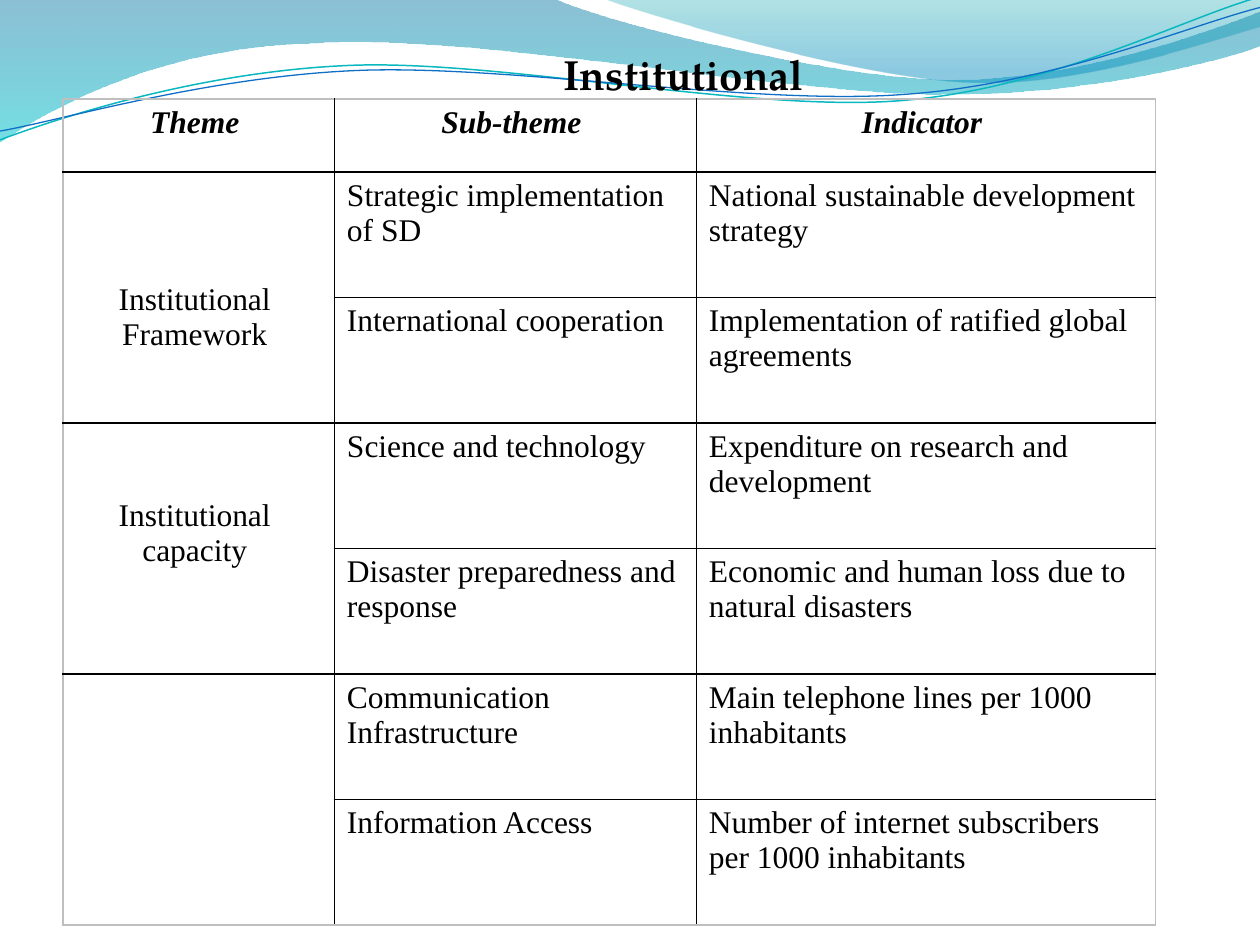
from dataclasses import dataclass
from math import cos, radians, sin

from lxml.etree import SubElement
from pptx import Presentation
from pptx.dml.color import RGBColor
from pptx.enum.text import MSO_ANCHOR, MSO_AUTO_SIZE, PP_ALIGN
from pptx.oxml.ns import qn
from pptx.util import Pt

BODY_FONT = "Times New Roman"
TITLE_FONT = "TeX Gyre Pagella"
BLACK = "000000"
GREY = "BFBFBF"
LINE_PITCH = 19.8
CELL_MARGIN = 3.6
COLUMN_WIDTHS = (155.1, 206.8, 262.4)
HEADER_HEIGHT = 41.7
ROW_HEIGHT = 71.7


@dataclass(frozen=True)
class Stop:
    position: int
    color: str
    opacity: int


@dataclass(frozen=True)
class Wave:
    start: tuple
    segments: tuple
    stops: tuple = ()
    line_color: str = ""
    line_width: float = 0
    tilt: float = 0
    pivot: tuple = (0, 0)


@dataclass(frozen=True)
class Theme:
    lines: tuple
    rows: tuple
    lines_above: int = 0


WAVES = (
    Wave((0, 0), (
        (316.8, -0.7),
        (342.7, 12.2, 478.1, 45.4, 545.8, 45.4),
        (614.2, 45.4, 689.8, 18.7, 720, 6.5),
        (720.7, 25.9),
        (707.8, 31.7, 626.4, 54.7, 537.1, 54),
        (447.8, 54, 275, 20.2, 185, 24.5),
        (92.9, 25.9, 33.1, 59.8, -0.7, 81.4),
        (0, 0),
    ), stops=(Stop(0, "0074A1", 45), Stop(100, "00C6CF", 55))),
    Wave((344.9, -0.7), (
        (366.5, 7.9, 491, 44.6, 553.7, 46.8),
        (616.3, 49.7, 691.9, 23, 720, 15.1),
        (720, 0),
        (344.9, -0.7),
    ), stops=(Stop(0, "00A1A9", 30), Stop(80, "008BBF", 45))),
    Wave((0, 79.9), (
        (34.6, 67, 113.8, 41, 199.4, 37.4),
        (284.4, 33.8, 427, 64.1, 513.4, 57.6),
        (599.8, 51.1, 675.4, 10.8, 718.6, -1.4),
    ), line_color="0AB8BF", line_width=0.85, tilt=-2.7, pivot=(359.3, 41.4)),
    Wave((0, 74.9), (
        (33.8, 69.1, 118.1, 43.9, 203.8, 40.3),
        (290.2, 36.7, 429.8, 60.5, 516.2, 54),
        (601.9, 48.2, 677.5, 15.1, 720, 4.3),
    ), line_color="0F6FC6", line_width=0.75, tilt=-2.7, pivot=(359.6, 42.5)),
)

HEADERS = ("Theme ", "Sub-theme ", "Indicator ")
THEMES = (
    Theme(("Institutional ", "Framework "), (
        ("Strategic implementation of SD", "National sustainable development strategy"),
        ("International cooperation", "Implementation of ratified global agreements"),
    ), lines_above=3),
    Theme(("Institutional ", "capacity "), (
        ("Science and technology", "Expenditure on research and development"),
        ("Disaster preparedness and response", "Economic and human loss due to natural disasters"),
    ), lines_above=2),
    Theme((), (
        ("Communication Infrastructure", "Main telephone lines per 1000 inhabitants"),
        ("Information Access", "Number of internet subscribers per 1000 inhabitants"),
    )),
)


def rgb(color: str) -> RGBColor:
    return RGBColor.from_string(color)


def level(point: tuple, wave: Wave) -> tuple:
    angle = radians(-wave.tilt)
    (x, y), (across, down) = point, wave.pivot
    return (Pt(across + (x - across) * cos(angle) - (y - down) * sin(angle)),
            Pt(down + (x - across) * sin(angle) + (y - down) * cos(angle)))


def bend(shape, segments: tuple) -> None:
    steps = iter(list(shape._element.iter(qn("a:lnTo"))))
    for segment in segments:
        corners = [next(steps) for _ in range(len(segment) // 2)]
        if len(corners) == 3:
            curve = corners[0].makeelement(qn("a:cubicBezTo"))
            corners[0].addprevious(curve)
            for corner in corners:
                curve.append(corner[0])
                corner.getparent().remove(corner)


def fill_gradient(shape, stops: tuple) -> None:
    shape.fill.background()
    properties = shape._element.spPr
    gradient = SubElement(properties, qn("a:gradFill"), rotWithShape="1")
    properties.replace(properties.find(qn("a:noFill")), gradient)
    stop_list = SubElement(gradient, qn("a:gsLst"))
    for stop in stops:
        entry = SubElement(stop_list, qn("a:gs"), pos=str(stop.position * 1000))
        color = SubElement(entry, qn("a:srgbClr"), val=stop.color)
        SubElement(color, qn("a:alpha"), val=str(stop.opacity * 1000))
    SubElement(gradient, qn("a:lin"), ang="5400000", scaled="1")


def draw_wave(page, wave: Wave) -> None:
    points = [wave.start]
    for segment in wave.segments:
        points += zip(segment[::2], segment[1::2])
    outline = [level(point, wave) for point in points]
    builder = page.shapes.build_freeform(*outline[0], scale=1.0)
    builder.add_line_segments(outline[1:], close=bool(wave.stops))
    shape = builder.convert_to_shape()
    bend(shape, wave.segments)
    shape.rotation = wave.tilt
    shape.shadow.inherit = False
    if wave.stops:
        fill_gradient(shape, wave.stops)
        shape.line.fill.background()
    else:
        shape.fill.background()
        shape.line.color.rgb = rgb(wave.line_color)
        shape.line.width = Pt(wave.line_width)


def add_span(para, text: str, size: float, font: str, bold: bool = False, italic: bool = False) -> None:
    span = para.add_run()
    span.text = text
    span.font.size = Pt(size)
    span.font.name = font
    span.font.bold = bold
    span.font.italic = italic
    span.font.color.rgb = rgb(BLACK)


def write_cell(cell, lines: tuple, centered: bool, header: bool = False) -> None:
    for index, line in enumerate(lines):
        para = cell.text_frame.paragraphs[0] if index == 0 else cell.text_frame.add_paragraph()
        para.alignment = PP_ALIGN.CENTER if centered else PP_ALIGN.LEFT
        add_span(para, line, 18, BODY_FONT, bold=header, italic=header)


def format_cell(cell, outer_sides: dict) -> None:
    properties = cell._tc.get_or_add_tcPr()
    for side, outer in outer_sides.items():
        border = SubElement(properties, qn(f"a:ln{side}"), w=str(Pt(1)))
        fill = SubElement(border, qn("a:solidFill"))
        SubElement(fill, qn("a:srgbClr"), val=GREY if outer else BLACK)
    cell.fill.background()


def draw_table(page) -> None:
    row_count = 1 + sum(len(theme.rows) for theme in THEMES)
    height = HEADER_HEIGHT + ROW_HEIGHT * (row_count - 1)
    frame = page.shapes.add_table(
        row_count, len(HEADERS), Pt(36), Pt(56.6), Pt(sum(COLUMN_WIDTHS)), Pt(height))
    table = frame.table
    table.first_row = table.horz_banding = False
    for column, width in zip(table.columns, COLUMN_WIDTHS):
        column.width = Pt(width)
    for index, row in enumerate(table.rows):
        row.height = Pt(ROW_HEIGHT if index else HEADER_HEIGHT)
    for column, header in enumerate(HEADERS):
        write_cell(table.cell(0, column), (header,), centered=True, header=True)
    top = 1
    for theme in THEMES:
        cell = table.cell(top, 0)
        cell.merge(table.cell(top + len(theme.rows) - 1, 0))
        cell.margin_top = Pt(CELL_MARGIN + LINE_PITCH * theme.lines_above)
        write_cell(cell, theme.lines, centered=True)
        for row, texts in enumerate(theme.rows, top):
            for column, text in enumerate(texts, 1):
                write_cell(table.cell(row, column), (text,), centered=False)
        top += len(theme.rows)
    for row in range(row_count):
        for column in range(len(HEADERS)):
            cell = table.cell(row, column)
            last_row = row + cell.span_height == row_count
            format_cell(cell, {"L": column == 0, "R": column == len(HEADERS) - 1, "T": row == 0, "B": last_row})


def place_title(page) -> None:
    box = page.shapes.title
    box.left, box.top, box.width, box.height = Pt(246), Pt(24), Pt(293.8), Pt(36)
    box.text_frame.vertical_anchor = MSO_ANCHOR.TOP
    box.text_frame.auto_size = MSO_AUTO_SIZE.SHAPE_TO_FIT_TEXT
    para = box.text_frame.paragraphs[0]
    para.alignment = PP_ALIGN.CENTER
    add_span(para, "Institutional", 24, TITLE_FONT, bold=True)
    add_span(para, " ", 18, TITLE_FONT)
    box._element.getparent().append(box._element)


def main() -> None:
    """Build the slide of institutional indicators."""
    deck = Presentation()
    deck.slide_width, deck.slide_height = Pt(720), Pt(540)
    page = deck.slides.add_slide(deck.slide_layouts[5])
    for wave in WAVES:
        draw_wave(page, wave)
    draw_table(page)
    place_title(page)
    deck.save("out.pptx")


if __name__ == "__main__":
    main()
